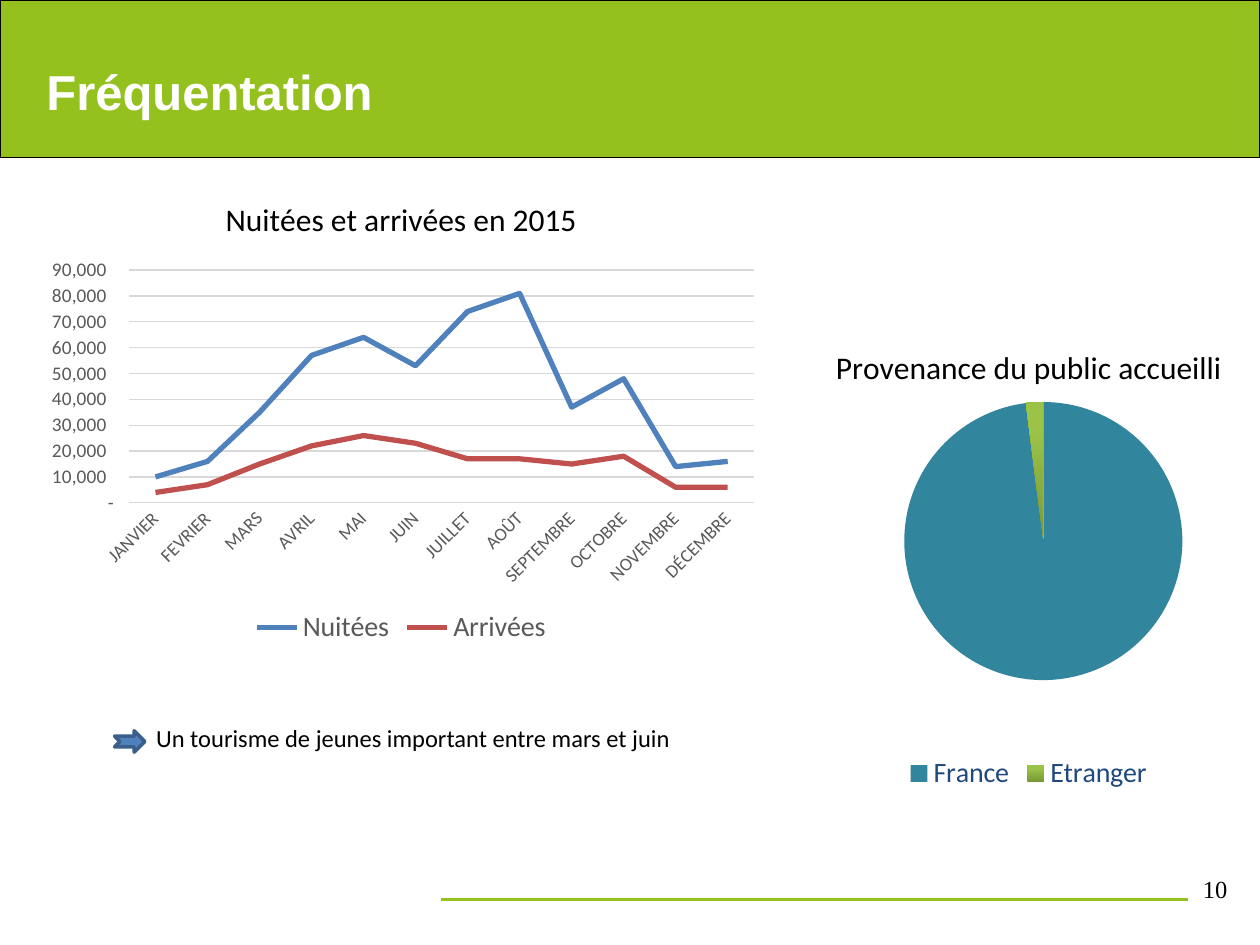
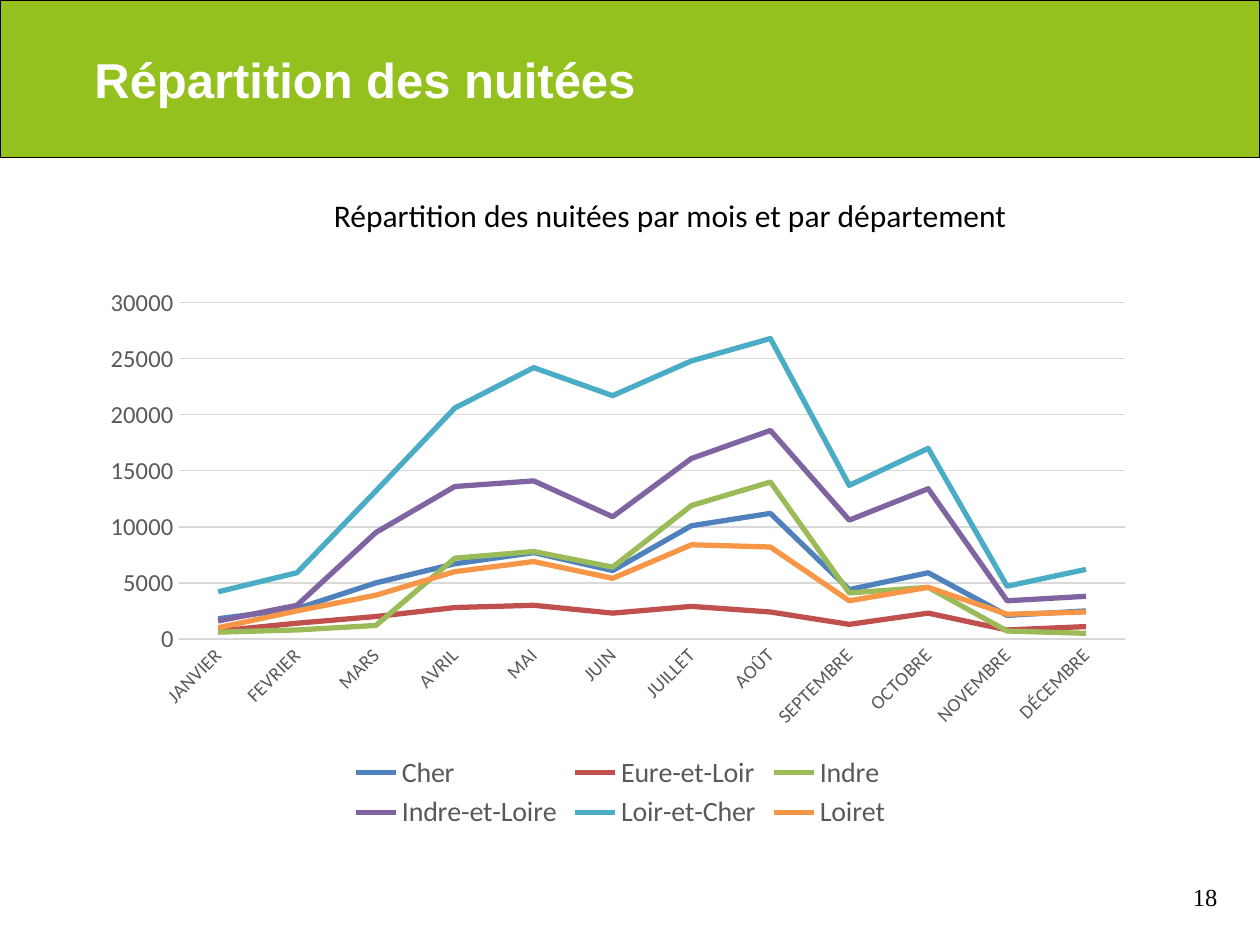
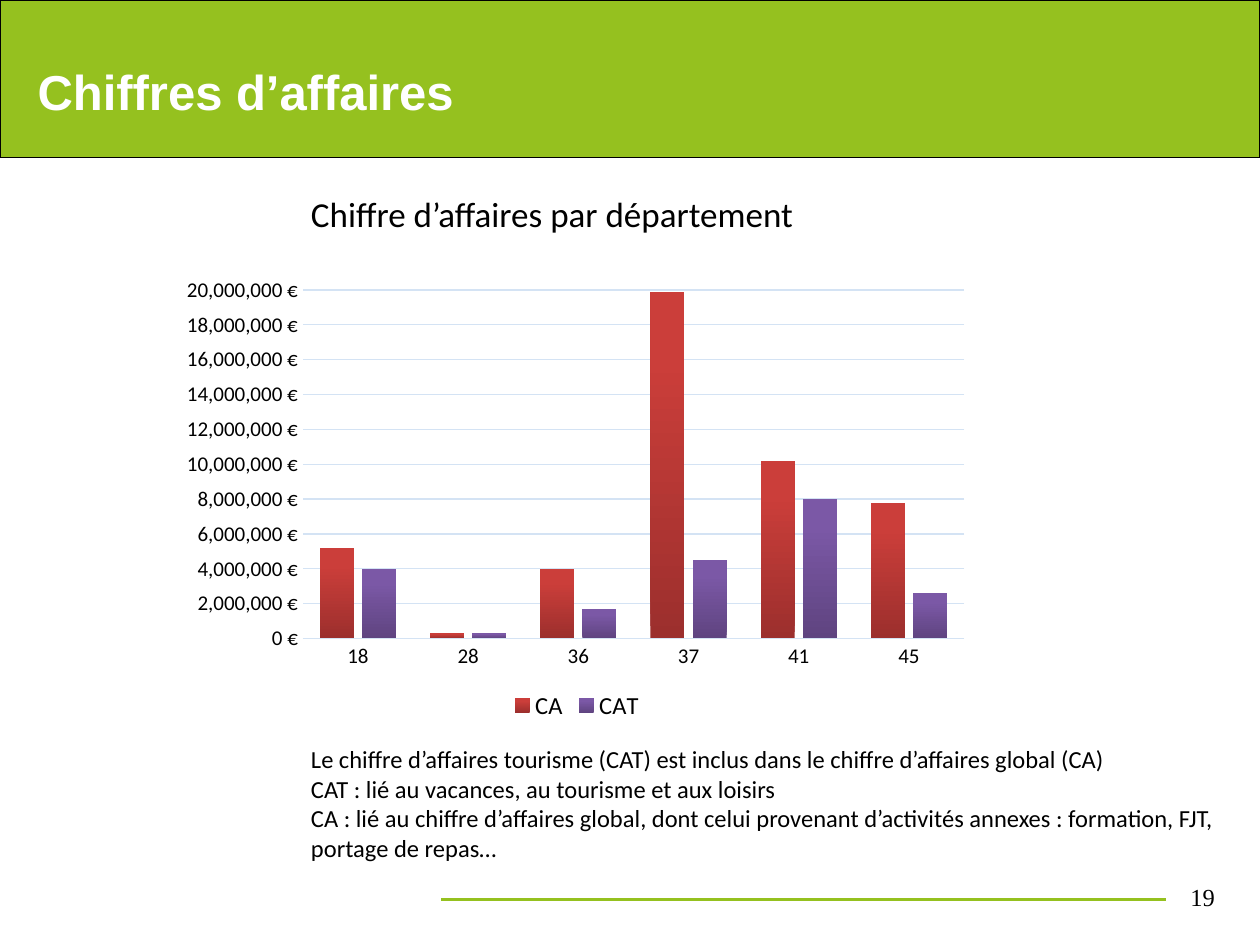
from dataclasses import dataclass
from typing import Any, NamedTuple, Optional

from lxml import etree
from pptx import Presentation
from pptx import util as u
from pptx.chart import data as cd
from pptx.dml import color as dc
from pptx.enum import chart as ec
from pptx.enum import shapes as es
from pptx.enum import text as et
from pptx.oxml import ns

PX = 9144  # 100 px to the inch


@dataclass(frozen=True)
class Theme:
    green: str = "95C11F"
    black: str = "000000"
    white: str = "FFFFFF"
    grey: str = "595959"
    rule: str = "D9D9D9"
    pale: str = "D4E3F4"
    navy: str = "1F497D"
    teal: str = "31859C"
    edge: str = "3A5F8C"
    series: tuple = ("4F81BD", "C0504D", "9BBB59", "8064A2", "4BACC6", "F79646")
    lime: tuple = ("779737", "9BC348")
    red: tuple = ("9C2F2D", "CB3E3A")
    plum: tuple = ("5F4480", "7B58A6")
    head: str = "Arial"
    body: str = "Calibri"
    foot: str = "Times New Roman"
    big: int = 28
    lead: int = 20
    sub: int = 18
    key: int = 16
    note: int = 14


T = Theme()


class Box(NamedTuple):
    x: int
    y: int
    w: int
    h: int

    def emu(self) -> list[int]:
        return [n * PX for n in self]


class Type(NamedTuple):
    size: float
    hue: str = T.black
    face: str = T.body
    bold: bool = False


class Frame(NamedTuple):
    """Inner plot area as shares of the chart."""
    x: float
    y: float
    w: float
    h: float


class Axes(NamedTuple):
    cat: Type
    val: Type
    rule: str
    form: str
    turn: int = 0
    top: Optional[int] = None


@dataclass(frozen=True)
class Graph:
    kind: Any
    box: Box
    plot: Frame
    key: Type
    cats: tuple
    rows: dict
    axes: Optional[Axes] = None
    title: str = ""


class Page(NamedTuple):
    title: str
    left: int
    num: str
    foot: Box
    rule: int = 0
    inset: bool = False


MONTHS = ("JANVIER", "FEVRIER", "MARS", "AVRIL", "MAI", "JUIN", "JUILLET", "AOÛT",
          "SEPTEMBRE", "OCTOBRE", "NOVEMBRE", "DÉCEMBRE")
KINDS = ec.XL_CHART_TYPE
HEAD = Type(T.big, T.white, T.head, True)
NOTE = Type(T.note)

VISITS = Graph(
    KINDS.LINE, Box(27, 139, 583, 377), Frame(0.13, 0.2, 0.85, 0.49),
    Type(T.key, T.grey), MONTHS,
    {"Nuitées": [10000, 16000, 35000, 57000, 64000, 53000,
                 74000, 81000, 37000, 48000, 14000, 16000],
     "Arrivées": [4000, 7000, 15000, 22000, 26000, 23000,
                  17000, 17000, 15000, 18000, 6000, 6000]},
    Axes(Type(10.5, T.grey), Type(11, T.grey), T.rule,
         '_-* #,##0\\ _€_-;\\-* #,##0\\ _€_-;_-* "-"?', -45),
    "Nuitées et arrivées en 2015")

ORIGIN = Graph(
    KINDS.PIE, Box(526, 257, 581, 375), Frame(0.33, 0.15, 0.38, 0.62),
    Type(T.key, T.navy), ("France", "Etranger"), {"Series 1": [98, 2]},
    title="Provenance du public accueilli")

NIGHTS = Graph(
    KINDS.LINE, Box(75, 218, 835, 445), Frame(0.08, 0.05, 0.9, 0.6),
    Type(T.key, T.grey), MONTHS,
    {"Cher": [1800, 2700, 5000, 6700, 7700, 6100,
              10100, 11200, 4400, 5900, 2100, 2500],
     "Eure-et-Loir": [700, 1400, 2000, 2800, 3000, 2300,
                      2900, 2400, 1300, 2300, 800, 1100],
     "Indre": [600, 800, 1200, 7200, 7800, 6400,
               11900, 14000, 4100, 4600, 700, 500],
     "Indre-et-Loire": [1600, 3000, 9500, 13600, 14100, 10900,
                        16100, 18600, 10600, 13400, 3400, 3800],
     "Loir-et-Cher": [4200, 5900, 13200, 20600, 24200, 21700,
                      24800, 26800, 13700, 17000, 4700, 6200],
     "Loiret": [1000, 2500, 3900, 6000, 6900, 5400,
                8400, 8200, 3400, 4600, 2200, 2400]},
    Axes(Type(11, T.grey), Type(14, T.grey), T.rule, "0", -45))

SALES = Graph(
    KINDS.COLUMN_CLUSTERED, Box(138, 212, 640, 364), Frame(0.16, 0.05, 0.82, 0.76),
    Type(T.note), ("18", "28", "36", "37", "41", "45"),
    {"CA": [5200000, 300000, 4000000, 19900000, 10200000, 7800000],
     "CAT": [4000000, 300000, 1700000, 4500000, 8000000, 2600000]},
    Axes(Type(12), Type(12), T.pale, '#,##0\\ "€"', top=20000000))


def put(item: Any, **vals: Any) -> None:
    """Set each named attribute of an object."""
    for name, val in vals.items():
        setattr(item, name, val)


def rgb(hue: str) -> dc.RGBColor:
    return dc.RGBColor.from_string(hue)


def style(font: Any, kind: Type) -> None:
    put(font, size=u.Pt(kind.size), name=kind.face, bold=kind.bold)
    font.color.rgb = rgb(kind.hue)


def paint(fill: Any, hue: str) -> None:
    fill.solid()
    fill.fore_color.rgb = rgb(hue)


def shade(fill: Any, hues: tuple) -> None:
    """Fade upwards from the first hue, reaching the second at 80 %."""
    fill.gradient()
    fill.gradient_angle = 90
    for stop, hue, pos in zip(fill.gradient_stops, hues, (0, 0.8)):
        stop.color.rgb = rgb(hue)
        stop.position = pos


def stroke(line: Any, hue: str, width: float) -> None:
    paint(line.fill, hue)
    line.width = u.Pt(width)


def shape(slide: Any, kind: Any, box: Box, fill: str, edge: str, width: float) -> Any:
    item = slide.shapes.add_shape(kind, *box.emu())
    item.shadow.inherit = False
    paint(item.fill, fill)
    stroke(item.line, edge, width)
    return item


def write(frame: Any, lines: tuple, kind: Type, align: Any = et.PP_ALIGN.LEFT) -> None:
    for i, line in enumerate(lines):
        para = frame.paragraphs[0] if i == 0 else frame.add_paragraph()
        para.alignment = align
        run = para.add_run()
        run.text = line
        style(run.font, kind)


def label(slide: Any, box: Box, kind: Type, *lines: str,
          align: Any = et.PP_ALIGN.LEFT) -> None:
    frame = slide.shapes.add_textbox(*box.emu()).text_frame
    frame.word_wrap = True
    write(frame, lines, kind, align)


def start(deck: Any, page: Page) -> Any:
    """Add a slide with its band, title, footer rule and number."""
    slide = deck.slides.add_slide(deck.slide_layouts[6])
    band = shape(slide, es.MSO_SHAPE.RECTANGLE, Box(0, 0, 1000, 125),
                 T.green, T.black, 0.75)
    if page.inset:
        put(band.text_frame, word_wrap=False, margin_left=page.left * PX,
            vertical_anchor=et.MSO_ANCHOR.MIDDLE)
        write(band.text_frame, (page.title,), HEAD)
    else:
        label(slide, Box(page.left, 44, 972, 57), HEAD, page.title)
    if page.rule:
        line = slide.shapes.add_connector(
            es.MSO_CONNECTOR.STRAIGHT, 350 * PX, 714 * PX, page.rule * PX, 714 * PX)
        stroke(line.line, T.green, 2)
        etree.SubElement(line._element.spPr, ns.qn("a:effectLst"))
    label(slide, page.foot, Type(T.note, face=T.foot), page.num,
          align=et.PP_ALIGN.RIGHT)
    return slide


def place(chart: Any, plot: Frame) -> None:
    """Fix the inner plot area."""
    area = chart._chartSpace.chart.plotArea
    for old in area.findall(ns.qn("c:layout")):
        area.remove(old)
    layout = etree.Element(ns.qn("c:layout"))
    manual = etree.SubElement(layout, ns.qn("c:manualLayout"))
    vals = {"layoutTarget": "inner", "xMode": "edge", "yMode": "edge",
            **plot._asdict()}
    for name, val in vals.items():
        etree.SubElement(manual, ns.qn("c:" + name)).set("val", str(val))
    area.insert(0, layout)


def scale(chart: Any, axes: Axes) -> None:
    """Style both axes and the grid."""
    cat, val = chart.category_axis, chart.value_axis
    for axis, kind in ((cat, axes.cat), (val, axes.val)):
        put(axis, major_tick_mark=ec.XL_TICK_MARK.NONE,
            minor_tick_mark=ec.XL_TICK_MARK.NONE)
        style(axis.tick_labels.font, kind)
    stroke(cat.format.line, axes.rule, 0.75)
    if axes.turn:
        body = cat._element.find(ns.qn("c:txPr")).find(ns.qn("a:bodyPr"))
        body.set("rot", str(axes.turn * 60000))
    put(val, has_major_gridlines=True, minimum_scale=0)
    if axes.top:
        val.maximum_scale = axes.top
    val.format.line.fill.background()
    stroke(val.major_gridlines.format.line, axes.rule, 0.75)
    put(val.tick_labels, number_format=axes.form, number_format_is_linked=False)


def draw(slide: Any, graph: Graph) -> None:
    data = cd.CategoryChartData()
    data.categories = graph.cats
    for name, vals in graph.rows.items():
        data.add_series(name, vals)
    chart = slide.shapes.add_chart(graph.kind, *graph.box.emu(), data).chart
    style(chart.font, Type(10))
    put(chart, has_title=bool(graph.title), has_legend=True)
    if graph.title:
        write(chart.chart_title.text_frame, (graph.title,), Type(T.sub),
              et.PP_ALIGN.CENTER)
    put(chart.legend, position=ec.XL_LEGEND_POSITION.BOTTOM, include_in_layout=False)
    style(chart.legend.font, graph.key)
    place(chart, graph.plot)
    if graph.axes:
        scale(chart, graph.axes)
    plot = chart.plots[0]
    plot.vary_by_categories = graph.kind == KINDS.PIE
    if graph.kind == KINDS.LINE:
        for row, hue in zip(plot.series, T.series):
            row.smooth = False
            row.marker.style = ec.XL_MARKER_STYLE.NONE
            stroke(row.format.line, hue, 3)
    elif graph.kind == KINDS.PIE:
        points = plot.series[0].points
        paint(points[0].format.fill, T.teal)
        shade(points[1].format.fill, T.lime)
    else:
        put(plot, gap_width=100, overlap=-24)
        for row, hues in zip(plot.series, (T.red, T.plum)):
            shade(row.format.fill, hues)


def main() -> None:
    deck = Presentation()
    put(deck, slide_width=1000 * PX, slide_height=750 * PX)

    slide = start(deck, Page("Fréquentation", 27, "10", Box(776, 689, 208, 50), 943))
    draw(slide, VISITS)
    draw(slide, ORIGIN)
    label(slide, Box(114, 569, 525, 34), NOTE,
          "Un tourisme de jeunes important entre mars et juin")
    shape(slide, es.MSO_SHAPE.NOTCHED_RIGHT_ARROW, Box(91, 580, 24, 17),
          T.series[0], T.edge, 2)

    slide = start(deck, Page("Répartition des nuitées", 75, "18",
                             Box(768, 695, 208, 50), inset=True))
    label(slide, Box(240, 151, 584, 40), Type(T.sub),
          "Répartition des nuitées par mois et par département",
          align=et.PP_ALIGN.CENTER)
    draw(slide, NIGHTS)

    slide = start(deck, Page("Chiffres d’affaires", 20, "19",
                             Box(766, 695, 208, 50), 925))
    label(slide, Box(237, 148, 503, 44), Type(T.lead),
          "Chiffre d’affaires par département")
    draw(slide, SALES)
    label(slide, Box(237, 586, 756, 104), NOTE,
          "Le chiffre d’affaires tourisme (CAT) est inclus dans le chiffre "
          "d’affaires global (CA)",
          "CAT : lié au vacances, au tourisme et aux loisirs",
          "CA : lié au chiffre d’affaires global, dont celui provenant "
          "d’activités annexes : formation, FJT, portage de repas…")

    deck.save("out.pptx")


if __name__ == "__main__":
    main()
